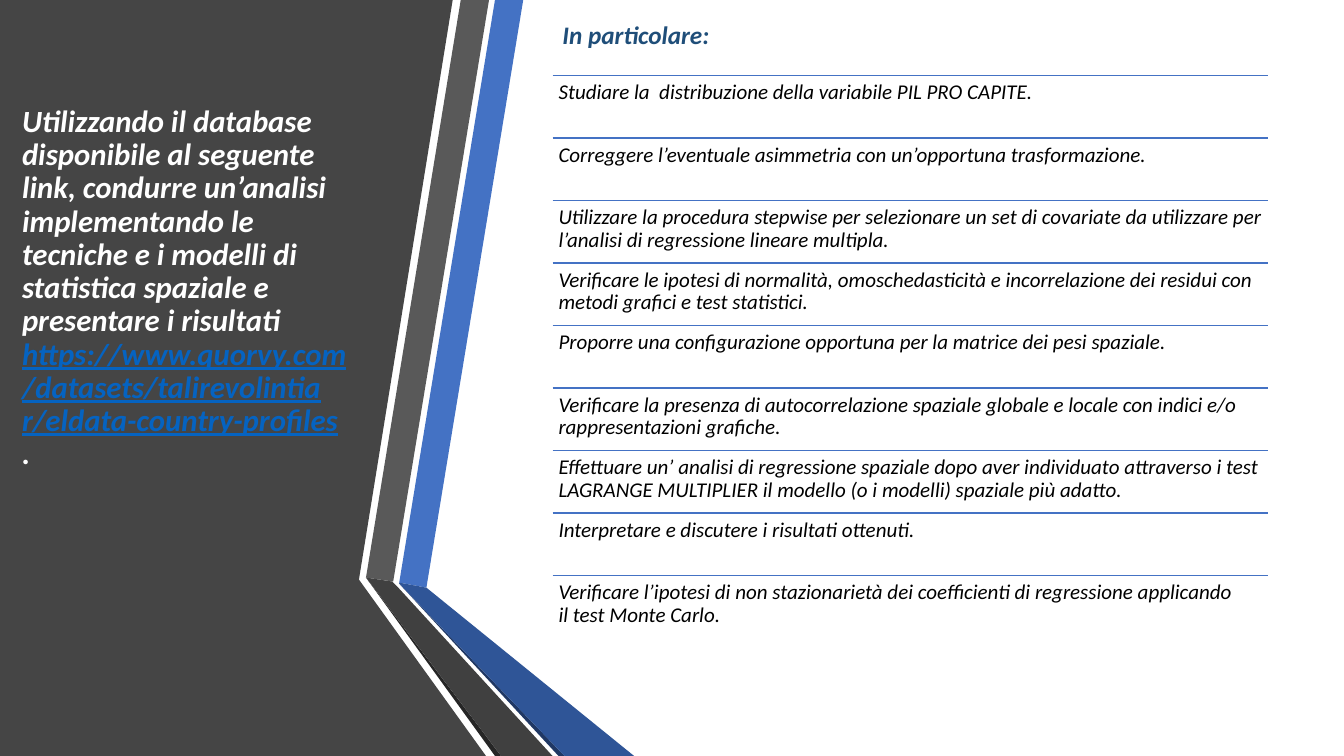
from dataclasses import dataclass
from pptx import Presentation
from pptx.dml.color import RGBColor as RGB
from pptx.enum.shapes import MSO_CONNECTOR as Conn
from pptx.util import Inches, Pt
from lxml.etree import SubElement as Sub
from pptx.oxml.ns import qn


@dataclass(frozen=True)
class Theme:
    font: str = "Calibri"
    panel: str = "454545"
    blue: str = "4472C4"
    navy: str = "2F5597"
    deep: str = "203864"
    gray: str = "595959"
    dark: str = "404040"
    coal: str = "262626"
    white: str = "FFFFFF"
    black: str = "000000"
    link: str = "0563C1"
    head: str = "1F4E79"
    title: int = 22
    label: int = 18
    body: int = 15


class Deck:
    def __init__(self, theme):
        self.theme = theme
        self.file = Presentation()
        self.file.slide_width = Inches(13.33)
        self.file.slide_height = Inches(7.5)
        self.slide = self.file.slides.add_slide(self.file.slide_layouts[6])

    def shape(self, color, points):
        first, *rest = [(Inches(x), Inches(y)) for x, y in points]
        form = self.slide.shapes.build_freeform(*first)
        form.add_line_segments(rest, close=True)
        item = form.convert_to_shape()
        item.shadow.inherit = False
        item.fill.solid()
        item.fill.fore_color.rgb = RGB.from_string(color)
        item.line.fill.background()

    def rule(self, left, top, width):
        line = self.slide.shapes.add_connector(
            Conn.STRAIGHT, Inches(left), Inches(top), Inches(left + width), Inches(top))
        line.line.color.rgb = RGB.from_string(self.theme.blue)
        line.line.width = Pt(1)
        Sub(line._element.spPr, qn("a:effectLst"))

    def text(self, box, lines, size, bold=False, space=0.9, pad=(0.1, 0.05)):
        frame = self.slide.shapes.add_textbox(*map(Inches, box)).text_frame
        frame.word_wrap = True
        frame.margin_left = frame.margin_right = Inches(pad[0])
        frame.margin_top = frame.margin_bottom = Inches(pad[1])
        para = frame.paragraphs[0]
        para.text = "\v".join(words for words, _ in lines)
        para.line_spacing = space
        for run, (_, color) in zip(para.runs, lines):
            font = run.font
            font.name, font.size = self.theme.font, Pt(size)
            font.bold, font.italic = bold, True
            font.underline = color == self.theme.link
            font.color.rgb = RGB.from_string(color)

    def save(self):
        self.file.save("out.pptx")


HARD = chr(160)
TASKS = [
    "Studiare la  distribuzione della variabile PIL PRO CAPITE.",
    "Correggere l’eventuale asimmetria con un’opportuna trasformazione.",
    "Utilizzare la procedura stepwise per selezionare un set di covariate da utilizzare per l’analisi di regressione lineare multipla.",
    "Verificare le ipotesi di normalità, omoschedasticità e incorrelazione dei residui con metodi grafici e test statistici.",
    "Proporre una configurazione opportuna per la matrice dei pesi spaziale.",
    "Verificare la presenza di autocorrelazione spaziale globale e locale con indici e/o rappresentazioni grafiche.",
    "Effettuare un’ analisi di regressione spaziale dopo aver individuato attraverso i test LAGRANGE MULTIPLIER il modello (o i modelli) spaziale più adatto.",
    "Interpretare e discutere i risultati ottenuti.",
    f"Verificare l’ipotesi di non stazionarietà dei coefficienti di regressione applicando il{HARD}test Monte Carlo.",
]
INTRO = ("Utilizzando il database disponibile al seguente link, condurre un’analisi "
         "implementando le tecniche e i modelli di statistica spaziale e presentare i risultati")
LINK = ["https://www.quorvy.com", "/datasets/talirevolintia", "r/eldata-country-profiles"]


def main():
    theme = Theme()
    deck = Deck(theme)
    bands = [
        (theme.panel, [(0, 0), (4.49, 0), (3.56, 5.75), (4.82, 7.5), (0, 7.5)]),
        (theme.blue, [(3.96, 5.78), (4.23, 5.83), (5.19, 0), (4.91, 0)]),
        (theme.gray, [(4.85, 0), (4.57, 0), (3.63, 5.73), (3.9, 5.77)]),
        (theme.coal, [(3.63, 5.73), (4.91, 7.5), (4.97, 7.5)]),
        (theme.deep, [(3.96, 5.79), (5.54, 7.5), (5.6, 7.5)]),
        (theme.navy, [(3.96, 5.79), (5.6, 7.5), (6.29, 7.5), (4.23, 5.83), (3.96, 5.78)]),
        (theme.dark, [(5.48, 7.5), (3.95, 5.83), (3.89, 5.77), (3.63, 5.73), (4.97, 7.5)]),
    ]
    for color, points in bands:
        deck.shape(color, points)

    link = [(part, theme.link) for part in LINK]
    intro = [(INTRO, theme.white), *link, (".", theme.white)]
    deck.text((0.12, 1, 3.51, 3.8), intro, theme.title, bold=True)

    left, top, width, step = 5.48, 0.75, 7.1, 0.62
    for row, task in enumerate(TASKS):
        y = top + row * step
        deck.rule(left, y, width)
        deck.text((left, y, width, step), [(task, theme.black)], theme.body, pad=(0.06, 0.06))

    deck.text((left, 0.14, 6.67, 0.4), [("In particolare:", theme.head)],
              theme.label, bold=True, space=1.0)
    deck.save()


if __name__ == "__main__":
    main()
